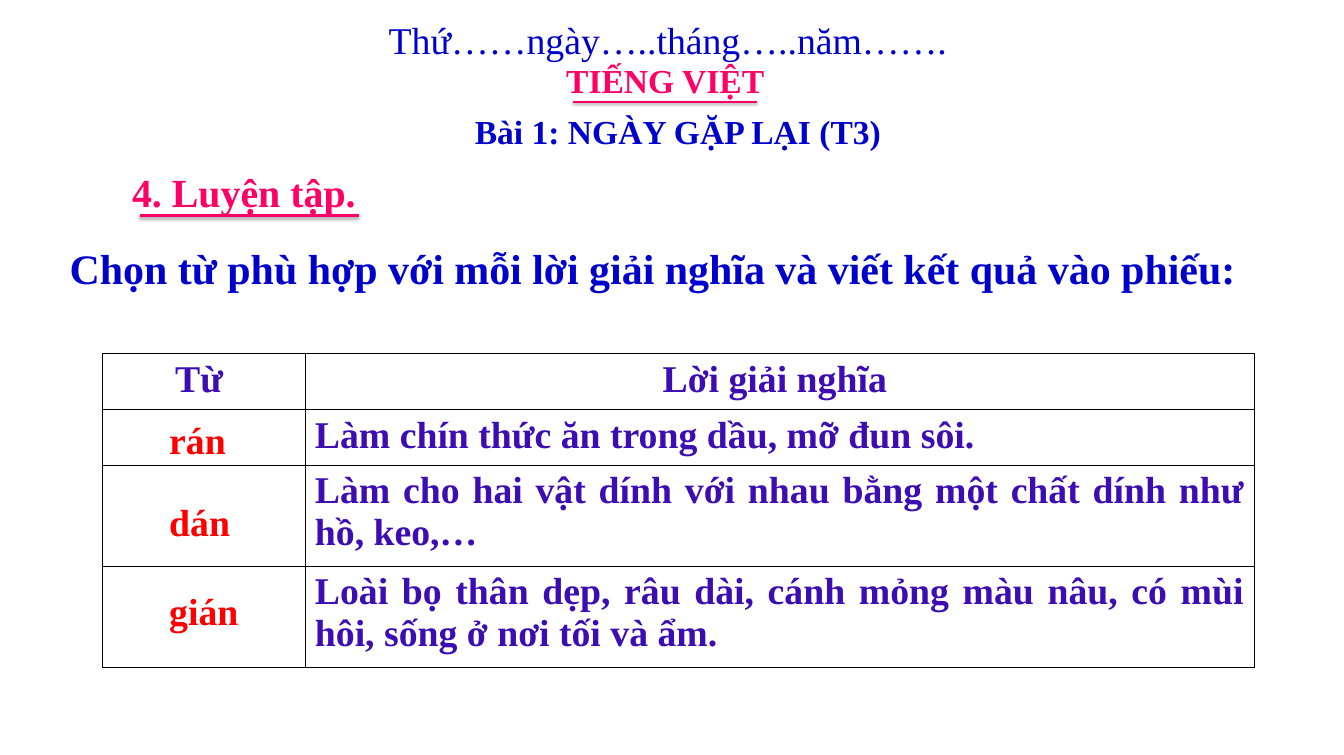
from dataclasses import dataclass

import pptx
import pptx.dml.color
import pptx.enum.shapes
import pptx.enum.text
import pptx.oxml
import pptx.oxml.ns
import pptx.util

Pt = pptx.util.Pt
Align = pptx.enum.text.PP_ALIGN


@dataclass(frozen=True)
class Theme:
    font: str = "Times New Roman"
    blue: str = "0000CC"
    pink: str = "FF0066"
    violet: str = "3C0DB3"
    red: str = "FF0000"
    black: str = "000000"
    title: int = 32
    body: int = 36
    section: int = 38
    task: int = 40


THEME = Theme()
SMALL_INSETS = (7.2, 3.6)
INSETS = (9.4, 5)
WIDE_INSETS = (11.5, 5.8)

ROWS = [
    ("Từ ", "Lời giải nghĩa "),
    ("", "Làm chín thức ăn trong dầu, mỡ đun sôi."),
    ("", "Làm cho hai vật dính với nhau bằng một chất dính như hồ, keo,…"),
    ("", "Loài bọ thân dẹp, râu dài, cánh mỏng màu nâu, có mùi hôi, sống ở nơi tối và ẩm."),
]
COLUMN_WIDTHS = (193, 905)
ROW_HEIGHTS = (52.8, 52.8, 95.8, 95.8)
ANSWERS = [("rán", 392.4), ("dán", 470.2), ("gián", 555.1)]


def rgb(color):
    return pptx.dml.color.RGBColor.from_string(color)


def xml(source):
    namespace = pptx.oxml.ns.nsdecls("a")
    return pptx.oxml.parse_xml(source.replace(" NS", " " + namespace, 1))


def set_insets(target, insets):
    across, down = map(Pt, insets)
    target.margin_left = target.margin_right = across
    target.margin_top = target.margin_bottom = down


def write(frame, text, size, color, bold=True, align=Align.LEFT):
    para = frame.paragraphs[0]
    para.text = text
    para.alignment = align
    para.font.name = THEME.font
    para.font.size = Pt(size)
    para.font.bold = bold
    para.font.color.rgb = rgb(color)


def add_text(shapes, place, text, size, color, bold=True, align=Align.LEFT,
             insets=SMALL_INSETS, wrap=True):
    box = shapes.add_textbox(*map(Pt, place))
    frame = box.text_frame
    frame.word_wrap = wrap
    frame.auto_size = pptx.enum.text.MSO_AUTO_SIZE.SHAPE_TO_FIT_TEXT
    set_insets(frame, insets)
    write(frame, text, size, color, bold, align)


def add_underline(shapes, left, right, top, width, distance, opacity):
    """Draw a level pink line with a soft shadow below it."""
    line = shapes.add_connector(pptx.enum.shapes.MSO_CONNECTOR.STRAIGHT,
                                Pt(left), Pt(top), Pt(right), Pt(top))
    line.line.color.rgb = rgb(THEME.pink)
    line.line.width = Pt(width)
    line._element.spPr.append(xml(
        f'<a:effectLst NS><a:outerShdw blurRad="{Pt(3.1)}" dist="{Pt(distance)}" '
        f'dir="5400000" rotWithShape="0"><a:srgbClr val="{THEME.black}">'
        f'<a:alpha val="{opacity * 1000}"/></a:srgbClr></a:outerShdw></a:effectLst>'))


def set_borders(cell):
    properties = cell._tc.get_or_add_tcPr()
    for index, side in enumerate(("lnL", "lnR", "lnT", "lnB")):
        properties.insert(index, xml(
            f'<a:{side} NS w="{Pt(1)}"><a:solidFill>'
            f'<a:srgbClr val="{THEME.black}"/></a:solidFill></a:{side}>'))


def add_meanings_table(shapes, left, top):
    table = shapes.add_table(len(ROWS), len(COLUMN_WIDTHS), Pt(left), Pt(top),
                             Pt(sum(COLUMN_WIDTHS)), Pt(sum(ROW_HEIGHTS))).table
    table.first_row = table.horz_banding = False
    for column, width in zip(table.columns, COLUMN_WIDTHS):
        column.width = Pt(width)
    for index, texts in enumerate(ROWS):
        table.rows[index].height = Pt(ROW_HEIGHTS[index])
        align = Align.JUSTIFY if index else Align.CENTER
        for cell, text in zip(table.rows[index].cells, texts):
            set_insets(cell, INSETS)
            cell.fill.background()
            set_borders(cell)
            if text:
                write(cell.text_frame, text, THEME.body, THEME.violet, align=align)


def main():
    deck = pptx.Presentation()
    deck.slide_width, deck.slide_height = Pt(1281.6), Pt(720)
    page = deck.slides.add_slide(deck.slide_layouts[6])

    heading = page.shapes.add_group_shape().shapes
    add_text(heading, (363.6, 12.2, 552.2, 51.1), "Thứ……ngày…..tháng…..năm…….",
             THEME.body, THEME.blue, bold=False, wrap=False)
    add_text(heading, (532.8, 54, 205.2, 46.1), "TIẾNG VIỆT",
             THEME.title, THEME.pink, wrap=False)
    add_underline(heading, 546.5, 722.2, 97.2, 2, 1.6, 38)

    add_text(page.shapes, (430.6, 100.1, 432, 50.4), "Bài 1: NGÀY GẶP LẠI (T3)",
             THEME.title, THEME.blue, align=Align.CENTER, insets=WIDE_INSETS)
    add_text(page.shapes, (56.9, 226.8, 1138.3, 58.3),
             "Chọn từ phù hợp với mỗi lời giải nghĩa và viết kết quả vào phiếu:",
             THEME.task, THEME.blue, insets=INSETS)

    section = page.shapes.add_group_shape().shapes
    add_text(section, (118.8, 156.2, 329.8, 53.3), "4. Luyện tập.",
             THEME.section, THEME.pink)
    add_underline(section, 133.2, 342, 205.9, 3, 1.8, 35)

    add_meanings_table(page.shapes, 97.9, 337)
    for word, top in ANSWERS:
        add_text(page.shapes, (151.9, top, 85.7, 53.3), word,
                 THEME.body, THEME.red, insets=INSETS)

    deck.save("out.pptx")


if __name__ == "__main__":
    main()
